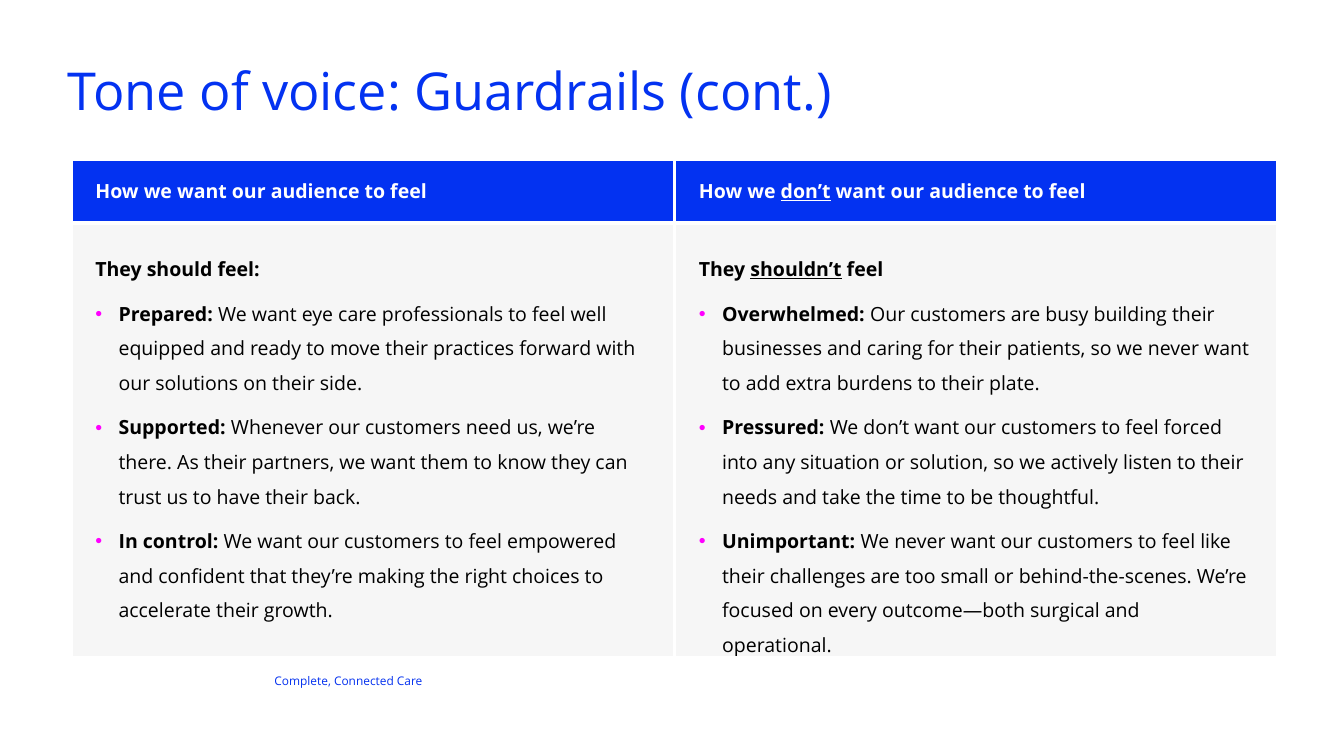
from lxml.etree import SubElement
from pptx import Presentation
from pptx.dml.color import RGBColor
from pptx.enum.text import MSO_ANCHOR, MSO_AUTO_SIZE, PP_ALIGN
from pptx.oxml import parse_xml
from pptx.oxml.ns import nsdecls, qn
from pptx.util import Pt

EMU_PER_PX = 9144  # 100 px to the inch
FONT = "Open Sans"
BLUE, WHITE, BLACK, GREY, PINK = "0332F1", "FFFFFF", "000000", "F6F6F6", "FF00FF"
FOOTER_BLUE = "0431EF"

TITLE = "Tone of voice: Guardrails (cont.)"
FOOTER = "Complete, Connected Care"
# Runs are (text, style): b bold, u underlined
COLUMNS = [
    {
        "header": [("How we want our audience to feel", "b")],
        "lead": [("They should feel:", "b")],
        "points": [
            ("Prepared: ", "We want eye care professionals to feel well equipped and ready "
             "to move their practices forward with our solutions on their side."),
            ("Supported: ", "Whenever our customers need us, we’re there. As their partners, "
             "we want them to know they can trust us to have their back."),
            ("In control: ", "We want our customers to feel empowered and confident that "
             "they’re making the right choices to accelerate their growth."),
        ],
    },
    {
        "header": [("How we ", "b"), ("don’t", "bu"), (" want our audience to feel", "b")],
        "lead": [("They ", "b"), ("shouldn’t", "bu"), (" feel", "b")],
        "points": [
            ("Overwhelmed: ", "Our customers are busy building their businesses and caring for "
             "their patients, so we never want to add extra burdens to their plate."),
            ("Pressured: ", "We don’t want our customers to feel forced into any situation or "
             "solution, so we actively listen to their needs and take the time to be thoughtful."),
            ("Unimportant: ", "We never want our customers to feel like their challenges are "
             "too small or behind-the-scenes. We’re focused on every outcome—both surgical "
             "and operational."),
        ],
    },
]

SLIDE_SIZE = (2199, 1237)
TITLE_BOX = (111, 92, 1913, 106)
FOOTER_BOX = (449, 1100, 348, 24)
TABLE_BOX = (116, 260, 1975, 736)
HEADER_HEIGHT = 105
CELL_INSET = 40
BULLET_INDENT = 38


def px(value):
    return value * EMU_PER_PX


def rgb(color):
    return RGBColor.from_string(color)


def add_bullet(paragraph):
    properties = paragraph._p.get_or_add_pPr()
    properties.set("marL", str(px(BULLET_INDENT)))
    properties.set("indent", str(-px(BULLET_INDENT)))
    SubElement(SubElement(properties, qn("a:buClr")), qn("a:srgbClr"), val=PINK)
    SubElement(properties, qn("a:buFont"), typeface="Arial")
    SubElement(properties, qn("a:buChar"), char="•")


def write_paragraph(paragraph, runs, size, color, line_spacing=None, space_after=None, bullet=False):
    if bullet:
        add_bullet(paragraph)
    if line_spacing:
        paragraph.line_spacing = line_spacing
    if space_after is not None:
        paragraph.space_after = Pt(space_after)
    for text, style in runs:
        run = paragraph.add_run()
        run.text = text
        font = run.font
        font.name, font.size = FONT, Pt(size)
        font.color.rgb = rgb(color)
        font.bold, font.underline = "b" in style, "u" in style


def set_frame(frame, top_inset, anchor):
    frame.margin_left = frame.margin_right = frame.margin_bottom = 0
    frame.margin_top = px(top_inset)
    frame.vertical_anchor = anchor
    frame.word_wrap = True
    frame.auto_size = MSO_AUTO_SIZE.NONE


def format_cell(cell, fill, top_inset, anchor):
    cell.margin_left = cell.margin_right = px(CELL_INSET)
    cell.margin_top, cell.margin_bottom = px(top_inset), 0
    cell.vertical_anchor = anchor
    cell.fill.solid()
    cell.fill.fore_color.rgb = rgb(fill)
    for position, side in enumerate("LRTB"):
        cell._tc.get_or_add_tcPr().insert(position, parse_xml(
            f'<a:ln{side} {nsdecls("a")} w="{Pt(4.5)}"><a:solidFill>'
            f'<a:srgbClr val="{WHITE}"/></a:solidFill></a:ln{side}>'))


def add_title(slide):
    title = slide.shapes.title
    title.left, title.top, title.width, title.height = map(px, TITLE_BOX)
    set_frame(title.text_frame, 2, MSO_ANCHOR.MIDDLE)
    paragraph = title.text_frame.paragraphs[0]
    paragraph.alignment = PP_ALIGN.LEFT
    write_paragraph(paragraph, [(TITLE, "")], 61.5, BLUE)


def add_footer(slide):
    frame = slide.shapes.add_textbox(*map(px, FOOTER_BOX)).text_frame
    set_frame(frame, 3, MSO_ANCHOR.TOP)
    write_paragraph(frame.paragraphs[0], [(FOOTER, "")], 14, FOOTER_BLUE)


def add_guardrails(slide):
    table = slide.shapes.add_table(2, len(COLUMNS), *map(px, TABLE_BOX)).table
    table.horz_banding = False
    table.rows[0].height = px(HEADER_HEIGHT)
    table.rows[1].height = px(TABLE_BOX[3] - HEADER_HEIGHT)
    for index, column in enumerate(COLUMNS):
        header, body = table.cell(0, index), table.cell(1, index)
        format_cell(header, BLUE, 0, MSO_ANCHOR.MIDDLE)
        write_paragraph(header.text_frame.paragraphs[0], column["header"], 23, WHITE)
        format_cell(body, GREY, CELL_INSET, MSO_ANCHOR.TOP)
        body_format = dict(size=23, color=BLACK, line_spacing=1.3, space_after=12)
        write_paragraph(body.text_frame.paragraphs[0], column["lead"], **body_format)
        for feeling, reason in column["points"]:
            write_paragraph(body.text_frame.add_paragraph(), [(feeling, "b"), (reason, "")],
                            bullet=True, **body_format)


def main():
    presentation = Presentation()
    presentation.slide_width, presentation.slide_height = map(px, SLIDE_SIZE)
    slide = presentation.slides.add_slide(presentation.slide_layouts[5])
    add_footer(slide)
    add_title(slide)
    add_guardrails(slide)
    presentation.save("out.pptx")


if __name__ == "__main__":
    main()
